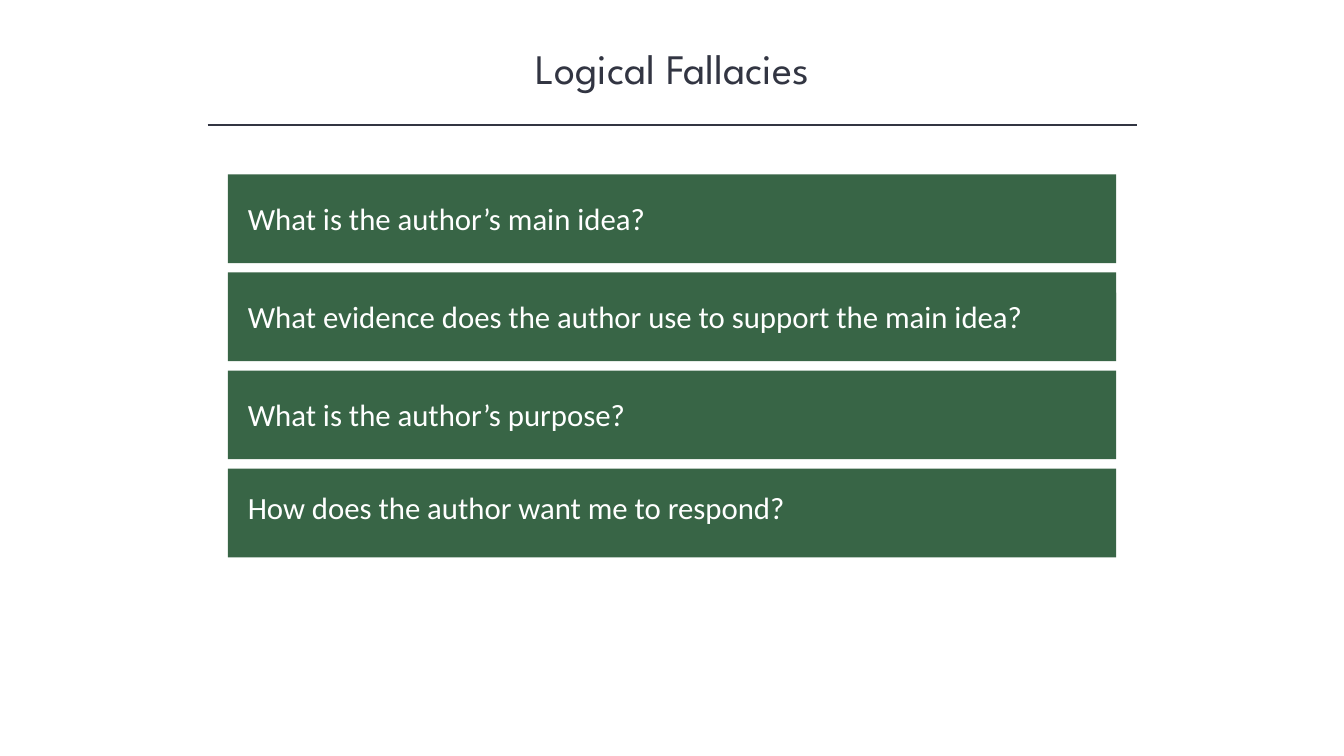
from pptx import Presentation
from pptx.dml.color import RGBColor
from pptx.enum.shapes import MSO_CONNECTOR, MSO_SHAPE
from pptx.enum.text import MSO_ANCHOR, MSO_AUTO_SIZE, PP_ALIGN
from pptx.oxml.ns import qn
from pptx.util import Inches, Pt
from lxml import etree

RECT = MSO_SHAPE.RECTANGLE
STRAIGHT = MSO_CONNECTOR.STRAIGHT
TOP = MSO_ANCHOR.TOP
NO_AUTOFIT = MSO_AUTO_SIZE.NONE
LEFT, CENTER = PP_ALIGN.LEFT, PP_ALIGN.CENTER

COLORS = {"ink": "323542", "green": "386546", "white": "FFFFFF"}
QUESTIONS = [
    ("What is the author’s main idea?", 8.54, 0.2),
    ("What evidence does the author use to support the main idea?", 8.71, 0.2),
    ("What is the author’s purpose?", 8.54, 0.2),
    ("How does the author want me to respond?", 8.54, 0.15),
]
BAR_LEFT, BAR_TOP, BAR_WIDTH, BAR_HEIGHT = 2.26, 1.73, 8.81, 0.88
BAR_STEP = 0.973


def color(name):
    return RGBColor.from_string(COLORS[name])


def write(shape, text, size, font, ink, align):
    tf = shape.text_frame
    tf.text = text
    tf.word_wrap = True
    tf.auto_size = NO_AUTOFIT
    tf.vertical_anchor = TOP
    p = tf.paragraphs[0]
    p.alignment = align
    p.line_spacing = 1.0
    p.space_before = Pt(0)
    r = p.runs[0]
    r.font.size = Pt(size)
    r.font.name = font
    r.font.color.rgb = color(ink)


def add_title(s, text):
    title = s.shapes.title
    title.left, title.top = Inches(1.67), Inches(0.37)
    title.width, title.height = Inches(10), Inches(0.61)
    write(title, text, 30, "League Spartan", "ink", CENTER)


def add_rule(s, x1, x2, y):
    line = s.shapes.add_connector(STRAIGHT, Inches(x1), Inches(y), Inches(x2), Inches(y))
    line.line.color.rgb = color("ink")
    line.line.width = Pt(1)
    etree.SubElement(line._element.spPr, qn("a:effectLst"))


def add_box(s, x, y, w, h):
    sp = s.shapes.add_shape(RECT, Inches(x), Inches(y), Inches(w), Inches(h))
    sp.shadow.inherit = False
    sp.fill.solid()
    sp.fill.fore_color.rgb = color("green")
    sp.line.fill.background()
    return sp


def add_question(s, y, text, label_width, label_offset):
    add_box(s, BAR_LEFT, y, BAR_WIDTH, BAR_HEIGHT)
    label = add_box(s, BAR_LEFT + 0.1, y + label_offset, label_width, 0.47)
    write(label, text, 22, "Calibri", "white", LEFT)


def main():
    """Build the slide of questions about logical fallacies."""
    prs = Presentation()
    prs.slide_width, prs.slide_height = Inches(13.33), Inches(7.5)
    s = prs.slides.add_slide(prs.slide_layouts[5])
    s.background.fill.solid()
    s.background.fill.fore_color.rgb = color("white")
    add_title(s, "Logical Fallacies")
    add_rule(s, 2.06, 11.28, 1.24)
    for i, (text, label_width, label_offset) in enumerate(QUESTIONS):
        add_question(s, BAR_TOP + i * BAR_STEP, text, label_width, label_offset)
    prs.save("out.pptx")


if __name__ == "__main__":
    main()
